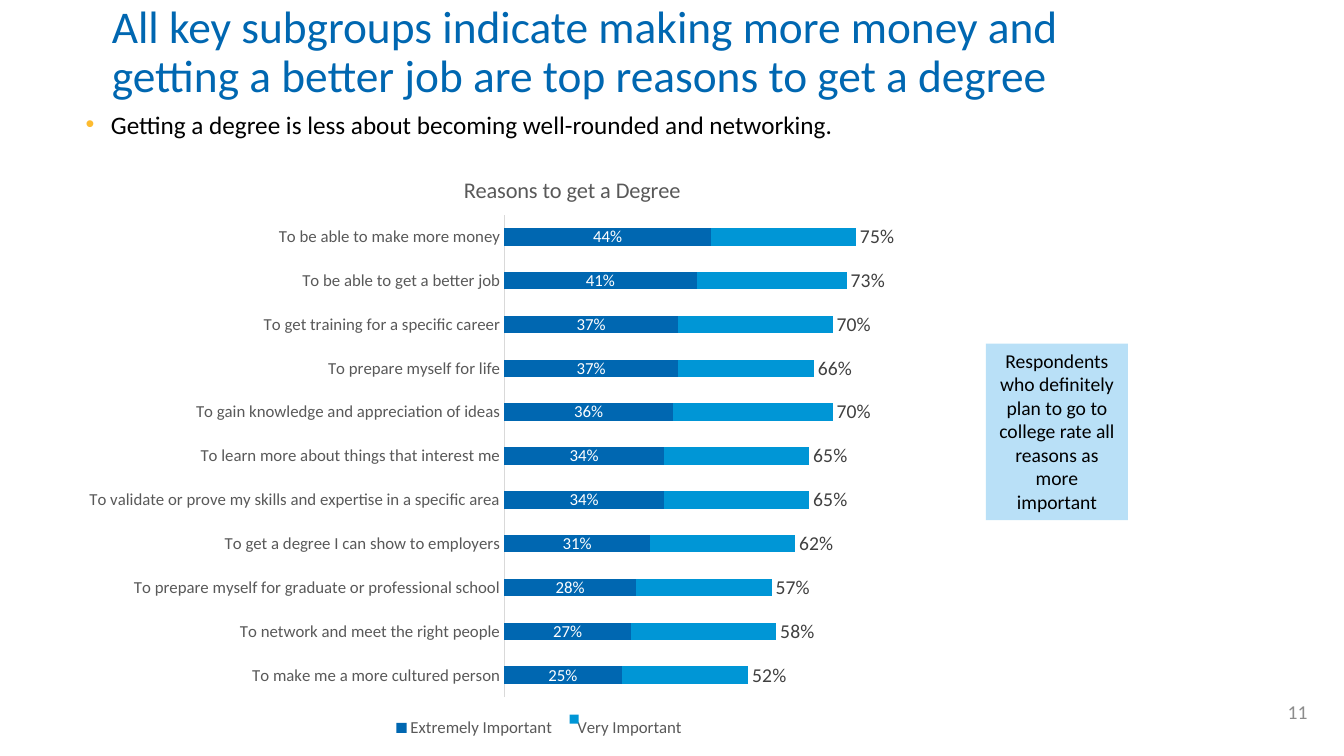
"""Build the slide on the reasons people give for getting a degree."""
import lxml.etree
import pptx
import pptx.chart.data
import pptx.dml.color
import pptx.enum.chart
import pptx.enum.shapes
import pptx.enum.text
import pptx.oxml.ns
import pptx.util

Pt = pptx.util.Pt
qn = pptx.oxml.ns.qn
ALIGN = pptx.enum.text.PP_ALIGN
ANCHOR = pptx.enum.text.MSO_ANCHOR
FIT = pptx.enum.text.MSO_AUTO_SIZE
LABEL = pptx.enum.chart.XL_LABEL_POSITION

COLORS = {
    "blue": "0067B1", "sky": "0096D6", "pale": "B9E0F7", "gold": "FDBB30",
    "black": "000000", "white": "FFFFFF", "dark": "404040",
    "label": "595959", "number": "8C8C8C", "axis": "D9D9D9",
}
REASONS = [
    ("To be able to make more money", 0.44, 0.31, 0.75),
    ("To be able to get a better job", 0.41, 0.32, 0.73),
    ("To get training for a specific career", 0.37, 0.33, 0.70),
    ("To prepare myself for life", 0.37, 0.29, 0.66),
    ("To gain knowledge and appreciation of ideas", 0.36, 0.34, 0.70),
    ("To learn more about things that interest me", 0.34, 0.31, 0.65),
    ("To validate or prove my skills and expertise in a specific area", 0.34, 0.31, 0.65),
    ("To get a degree I can show to employers", 0.31, 0.31, 0.62),
    ("To prepare myself for graduate or professional school", 0.28, 0.29, 0.57),
    ("To network and meet the right people", 0.27, 0.31, 0.58),
    ("To make me a more cultured person", 0.25, 0.27, 0.52),
]


def rgb(name):
    return pptx.dml.color.RGBColor.from_string(COLORS[name])


def add_xml(parent, tag, index=None, **attributes):
    element = lxml.etree.SubElement(parent, qn(tag), attributes)
    if index is not None:
        parent.insert(index, element)
    return element


def set_layout(parent, index, **values):
    for old in parent.findall(qn("c:layout")):
        parent.remove(old)
    manual = add_xml(add_xml(parent, "c:layout", index), "c:manualLayout")
    for tag, value in values.items():
        add_xml(manual, f"c:{tag}", val=str(value))


class SlideBuilder:
    def __init__(self, page, font="Calibri"):
        self.page = page
        self.font = font

    def style(self, font, size, color):
        font.name = self.font
        font.size = Pt(size)
        font.bold = False
        font.color.rgb = rgb(color)

    def set_text(self, shape, text, size, color, align=ALIGN.LEFT, anchor=ANCHOR.TOP, fit=FIT.NONE):
        frame = shape.text_frame
        frame.text = text
        frame.word_wrap = True
        frame.auto_size = fit
        frame.vertical_anchor = anchor
        para = frame.paragraphs[0]
        para.alignment = align
        para.space_before = Pt(0)
        for span in para.runs:
            self.style(span.font, size, color)
        return para

    def move(self, shape, place):
        shape.left, shape.top, shape.width, shape.height = map(Pt, place)

    def title(self, text, place):
        self.move(self.page.shapes.title, place)
        para = self.set_text(self.page.shapes.title, text, 32.4, "blue", anchor=ANCHOR.MIDDLE)
        para.line_spacing = 0.9

    def bullet(self, text, place):
        body = self.page.placeholders[1]
        self.move(body, place)
        para = self.set_text(body, text, 18, "black")
        settings = para._p.get_or_add_pPr()
        settings.set("marL", str(Pt(18)))
        settings.set("indent", str(-Pt(18)))
        add_xml(add_xml(settings, "a:buClr"), "a:srgbClr", val=COLORS["gold"])
        add_xml(settings, "a:buFont", typeface="Arial")
        add_xml(settings, "a:buChar", char="•")

    def page_number(self, text, place):
        box = self.page.shapes.add_textbox(*map(Pt, place))
        self.set_text(box, text, 14, "number", ALIGN.RIGHT, ANCHOR.MIDDLE)

    def rectangle(self, place, fill):
        box = self.page.shapes.add_shape(
            pptx.enum.shapes.MSO_SHAPE.RECTANGLE, *map(Pt, place))
        box.shadow.inherit = False
        box.fill.solid()
        box.fill.fore_color.rgb = rgb(fill)
        box.line.fill.background()
        return box

    def callout(self, text, place):
        box = self.rectangle(place, "pale")
        self.set_text(box, text, 14, "black", ALIGN.CENTER, fit=FIT.SHAPE_TO_FIT_TEXT)

    def series_labels(self, series, size, color, position):
        labels = series.data_labels
        labels.show_value = True
        labels.number_format = "0%"
        labels.number_format_is_linked = False
        labels.position = position
        self.style(labels.font, size, color)

    def chart(self, heading, place):
        names, extremely, very, total = zip(*REASONS)
        data = pptx.chart.data.CategoryChartData(number_format="0%")
        data.categories = names
        data.add_series("Extremely Important", extremely)
        data.add_series("Series 2", very)
        data.add_series("Very Important", total)
        chart = self.page.shapes.add_chart(
            pptx.enum.chart.XL_CHART_TYPE.BAR_STACKED, *map(Pt, place), data).chart
        self.style(chart.font, 10, "black")

        chart.has_title = True
        chart.chart_title.text_frame.text = heading
        self.style(chart.chart_title.text_frame.paragraphs[0].runs[0].font, 16, "label")
        set_layout(chart.chart_title._element, 1, xMode="edge", yMode="edge", x=0.42, y=0.04)
        set_layout(chart._chartSpace.chart.plotArea, 0, layoutTarget="inner",
                   xMode="edge", yMode="edge", x=0.465, y=0.114, w=0.519, h=0.811)

        plot = chart.plots[0]
        plot.vary_by_categories = False
        plot.gap_width = 150
        plot.overlap = 100
        for series, color in zip(plot.series, ("blue", "sky")):
            series.format.fill.solid()
            series.format.fill.fore_color.rgb = rgb(color)
        plot.series[2].format.fill.background()
        self.series_labels(plot.series[0], 12, "white", LABEL.CENTER)
        self.series_labels(plot.series[2], 14, "dark", LABEL.INSIDE_BASE)

        reasons = chart.category_axis
        reasons.reverse_order = True
        reasons.major_tick_mark = pptx.enum.chart.XL_TICK_MARK.NONE
        reasons.format.line.color.rgb = rgb("axis")
        reasons.format.line.width = Pt(0.75)
        self.style(reasons.tick_labels.font, 12, "label")
        shares = chart.value_axis
        shares.visible = False
        shares.has_major_gridlines = False
        shares.minimum_scale = 0
        shares.maximum_scale = 1.1

        chart.has_legend = True
        legend = chart.legend
        legend.position = pptx.enum.chart.XL_LEGEND_POSITION.BOTTOM
        legend.include_in_layout = False
        self.style(legend.font, 12, "label")
        hidden = add_xml(legend._element, "c:legendEntry", 1)
        add_xml(hidden, "c:idx", val="1")
        add_xml(hidden, "c:delete", val="1")


def main():
    deck = pptx.Presentation()
    deck.slide_width, deck.slide_height = Pt(960), Pt(540)
    builder = SlideBuilder(deck.slides.add_slide(deck.slide_layouts[1]))
    builder.title("All key subgroups indicate making more money and getting a better job "
                  "are top reasons to get a degree", (72.7, 0, 732.2, 76.3))
    builder.page_number("11", (870.5, 493.9, 70.6, 28.8))
    builder.chart("Reasons to get a Degree", (30.2, 105.1, 709.9, 424.8))
    builder.bullet("Getting a degree is less about becoming well-rounded and networking.",
                   (54, 74.2, 851, 32.4))
    builder.callout("Respondents who definitely plan to go to college rate all reasons "
                    "as more important", (704.2, 245.5, 101.5, 126))
    builder.rectangle((406.8, 510.5, 6.5, 6.5), "sky")
    deck.save("out.pptx")


if __name__ == "__main__":
    main()
